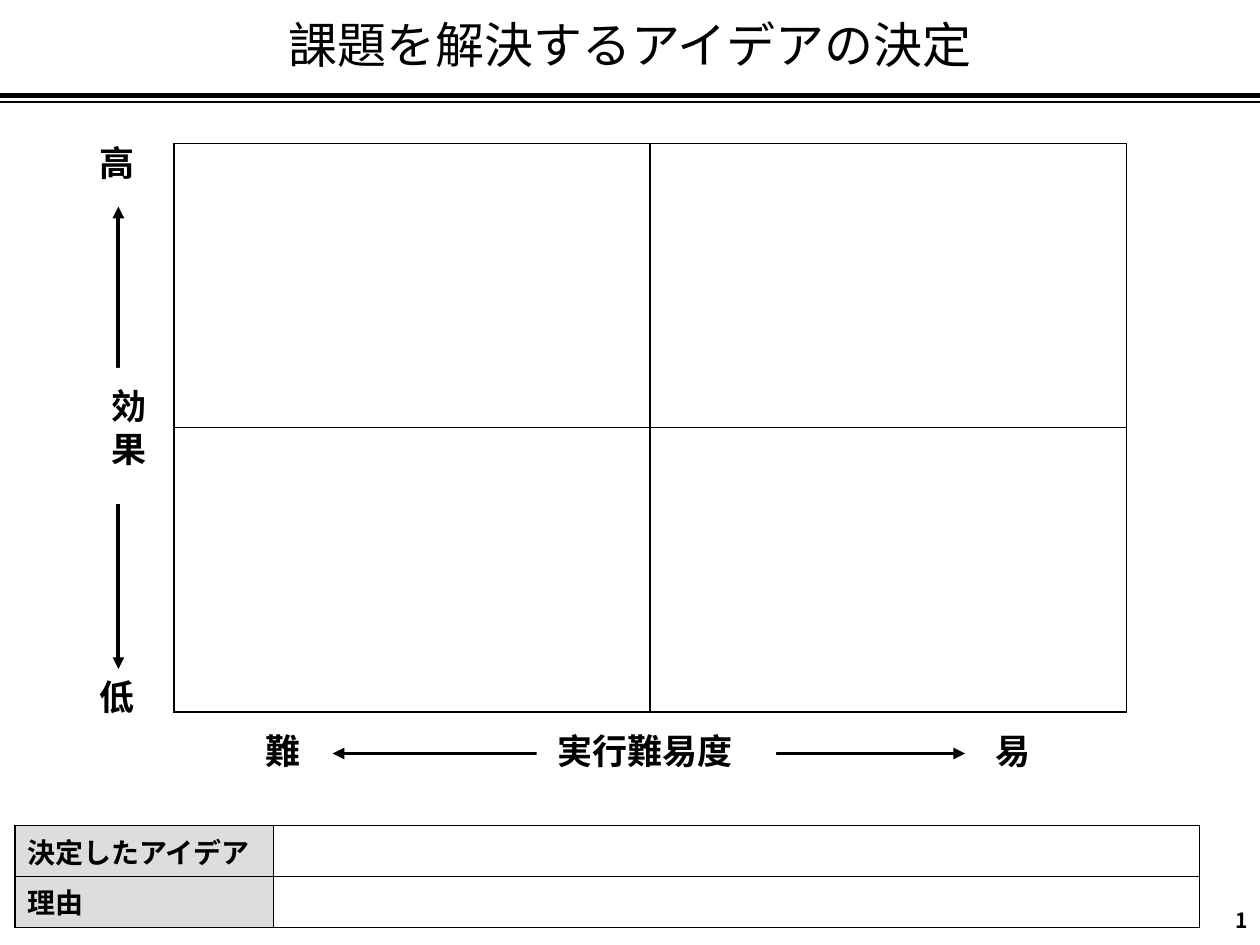
from dataclasses import dataclass

from lxml.etree import SubElement
from pptx import Presentation
from pptx.dml.color import RGBColor
from pptx.enum.shapes import MSO_CONNECTOR
from pptx.enum.text import MSO_ANCHOR, MSO_AUTO_SIZE, PP_ALIGN
from pptx.oxml.ns import qn
from pptx.util import Inches, Pt


@dataclass(frozen=True)
class Theme:
    font: str = "Noto Sans CJK JP"
    ink: RGBColor = RGBColor(0, 0, 0)
    paper: RGBColor = RGBColor(255, 255, 255)
    header: RGBColor = RGBColor(0xDD, 0xDD, 0xDD)
    title: int = 28
    axis: int = 20
    cell: int = 16
    page: int = 12
    border: float = 1
    arrow: float = 2.25


@dataclass(frozen=True)
class Box:
    left: float
    top: float
    width: float
    height: float

    def lengths(self) -> list:
        return [Inches(v) for v in (self.left, self.top, self.width, self.height)]


@dataclass(frozen=True)
class AxisLabel:
    text: str
    box: Box
    vertical: bool = False


@dataclass(frozen=True)
class Line:
    start: tuple[float, float]
    end: tuple[float, float]
    width: float
    arrows: bool = False


THEME = Theme()

LINES = [
    Line((0, 0.76), (10, 0.76), 3),
    Line((0, 0.81), (10, 0.81), 1),
    Line((2.64, 5.98), (7.66, 5.98), THEME.arrow, arrows=True),
    Line((0.94, 1.64), (0.94, 5.31), THEME.arrow, arrows=True),
]

AXIS_LABELS = [
    AxisLabel(" 実行難易度", Box(4.26, 5.74, 1.9, 0.44)),
    AxisLabel("難", Box(2.01, 5.74, 0.48, 0.44)),
    AxisLabel("易", Box(7.8, 5.74, 0.48, 0.44)),
    AxisLabel(" 効 果", Box(0.67, 2.92, 0.54, 1.08), vertical=True),
    AxisLabel("高", Box(0.69, 1.07, 0.48, 0.44)),
    AxisLabel("低", Box(0.69, 5.31, 0.48, 0.44)),
]


def write(frame, text: str, *, size: float, bold: bool = False,
          align: PP_ALIGN = PP_ALIGN.LEFT, spacing: float = 1.0) -> None:
    paragraph = frame.paragraphs[0]
    paragraph.alignment = align
    paragraph.line_spacing = spacing
    run = paragraph.add_run()
    run.text = text
    run.font.size = Pt(size)
    run.font.bold = bold
    run.font.name = THEME.font
    run.font.color.rgb = THEME.ink
    SubElement(run.font._element, qn("a:ea"), typeface=THEME.font)


def add_text(slide, box: Box, text: str, **text_format) -> None:
    frame = slide.shapes.add_textbox(*box.lengths()).text_frame
    frame.word_wrap = True
    frame.vertical_anchor = MSO_ANCHOR.MIDDLE
    write(frame, text, **text_format)


def add_axis_label(slide, label: AxisLabel) -> None:
    """Place a filled label that interrupts the axis arrow behind it."""
    plate = slide.shapes.add_textbox(*label.box.lengths())
    plate.fill.solid()
    plate.fill.fore_color.rgb = THEME.paper
    frame = plate.text_frame
    frame.word_wrap = False
    frame.auto_size = MSO_AUTO_SIZE.SHAPE_TO_FIT_TEXT
    if label.vertical:
        frame._txBody.bodyPr.set("vert", "eaVert")
    write(frame, label.text, size=THEME.axis, bold=True)


def add_line(slide, line: Line) -> None:
    points = [Inches(v) for v in (*line.start, *line.end)]
    connector = slide.shapes.add_connector(MSO_CONNECTOR.STRAIGHT, *points)
    connector.line.width = Pt(line.width)
    connector.line.color.rgb = THEME.ink
    if line.arrows:
        for end in ("a:headEnd", "a:tailEnd"):
            SubElement(connector.line._get_or_add_ln(), qn(end), type="triangle")
    SubElement(connector._element.spPr, qn("a:effectLst"))


def border_cell(cell) -> None:
    properties = cell._tc.get_or_add_tcPr()
    for side in ("a:lnL", "a:lnR", "a:lnT", "a:lnB"):
        edge = SubElement(properties, qn(side), w=str(Pt(THEME.border)))
        fill = SubElement(edge, qn("a:solidFill"))
        SubElement(fill, qn("a:srgbClr"), val=str(THEME.ink))


def add_grid(slide, box: Box, widths: list[float], headers: list[str]) -> None:
    """Draw one bordered row per header; an empty header leaves its cell plain."""
    table = slide.shapes.add_table(len(headers), len(widths), *box.lengths()).table
    table.first_row = table.horz_banding = False
    for column, width in zip(table.columns, widths):
        column.width = Inches(width)
    for cell in table.iter_cells():
        border_cell(cell)
        cell.fill.background()
        cell.margin_top = cell.margin_bottom = Inches(0.03)
        cell.vertical_anchor = MSO_ANCHOR.MIDDLE
    for row, header in enumerate(headers):
        if header:
            cell = table.cell(row, 0)
            cell.fill.solid()
            cell.fill.fore_color.rgb = THEME.header
            write(cell.text_frame, header, size=THEME.cell, bold=True)


def main() -> None:
    presentation = Presentation()
    presentation.slide_width, presentation.slide_height = Inches(10), Inches(7.5)
    slide = presentation.slides.add_slide(presentation.slide_layouts[6])

    add_text(slide, Box(0, 0, 10, 0.76), "課題を解決するアイデアの決定",
             size=THEME.title, align=PP_ALIGN.CENTER, spacing=0.9)
    add_text(slide, Box(9.52, 7.1, 0.48, 0.4), "1",
             size=THEME.page, bold=True, align=PP_ALIGN.RIGHT)
    add_grid(slide, Box(1.38, 1.14, 7.56, 4.51), [3.78, 3.78], ["", ""])
    for line in LINES:
        add_line(slide, line)
    for label in AXIS_LABELS:
        add_axis_label(slide, label)
    add_grid(slide, Box(0.12, 6.55, 9.4, 0.81), [2.05, 7.35],
             ["決定したアイデア", "理由"])

    presentation.save("out.pptx")


if __name__ == "__main__":
    main()
